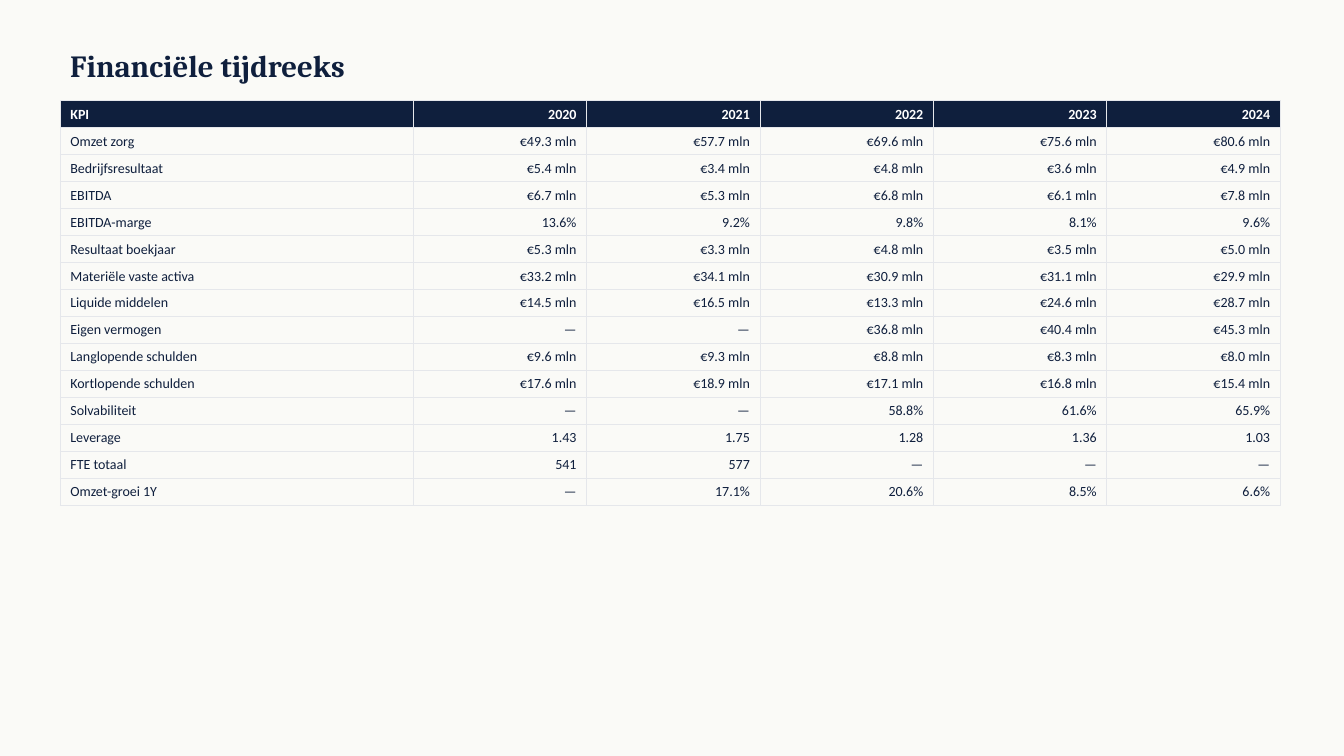
"""Build a slide with a table of financial figures for 2020 to 2024."""
import pptx
import pptx.dml.color
import pptx.enum.text
import pptx.oxml
import pptx.oxml.ns
import pptx.util
from pptx.util import Cm

COLORS = {"paper": "FAFAF7", "navy": "0F1F3D", "white": "FFFFFF", "grid": "E5E7EB"}
ROW_HEIGHT = Cm(0.68)
ROWS = [
    ("KPI", "2020", "2021", "2022", "2023", "2024"),
    ("Omzet zorg", "€49.3 mln", "€57.7 mln", "€69.6 mln", "€75.6 mln", "€80.6 mln"),
    ("Bedrijfsresultaat", "€5.4 mln", "€3.4 mln", "€4.8 mln", "€3.6 mln", "€4.9 mln"),
    ("EBITDA", "€6.7 mln", "€5.3 mln", "€6.8 mln", "€6.1 mln", "€7.8 mln"),
    ("EBITDA-marge", "13.6%", "9.2%", "9.8%", "8.1%", "9.6%"),
    ("Resultaat boekjaar", "€5.3 mln", "€3.3 mln", "€4.8 mln", "€3.5 mln", "€5.0 mln"),
    ("Materiële vaste activa", "€33.2 mln", "€34.1 mln", "€30.9 mln", "€31.1 mln", "€29.9 mln"),
    ("Liquide middelen", "€14.5 mln", "€16.5 mln", "€13.3 mln", "€24.6 mln", "€28.7 mln"),
    ("Eigen vermogen", "—", "—", "€36.8 mln", "€40.4 mln", "€45.3 mln"),
    ("Langlopende schulden", "€9.6 mln", "€9.3 mln", "€8.8 mln", "€8.3 mln", "€8.0 mln"),
    ("Kortlopende schulden", "€17.6 mln", "€18.9 mln", "€17.1 mln", "€16.8 mln", "€15.4 mln"),
    ("Solvabiliteit", "—", "—", "58.8%", "61.6%", "65.9%"),
    ("Leverage", "1.43", "1.75", "1.28", "1.36", "1.03"),
    ("FTE totaal", "541", "577", "—", "—", "—"),
    ("Omzet-groei 1Y", "—", "17.1%", "20.6%", "8.5%", "6.6%"),
]


def style_text(paragraph, font_name, size, color, bold):
    for span in paragraph.runs:
        span.font.name = font_name
        span.font.size = pptx.util.Pt(size)
        span.font.bold = bold
        span.font.color.rgb = pptx.dml.color.RGBColor.from_string(COLORS[color])


def add_borders(cell):
    properties = cell._tc.get_or_add_tcPr()
    for side in ("lnL", "lnR", "lnT", "lnB"):
        properties.append(pptx.oxml.parse_xml(
            f'<a:{side} {pptx.oxml.ns.nsdecls("a")} w="{pptx.util.Pt(0.5)}"><a:solidFill>'
            f'<a:srgbClr val="{COLORS["grid"]}"/></a:solidFill></a:{side}>'))


deck = pptx.Presentation()
deck.slide_width, deck.slide_height = Cm(33.87), Cm(19.05)
page = deck.slides.add_slide(deck.slide_layouts[6])
page.background.fill.solid()
page.background.fill.fore_color.rgb = pptx.dml.color.RGBColor.from_string(COLORS["paper"])

title_box = page.shapes.add_textbox(Cm(1.52), Cm(1.02), Cm(30.48), Cm(1.27))
title_box.text_frame.word_wrap = True
title_box.text_frame.vertical_anchor = pptx.enum.text.MSO_ANCHOR.MIDDLE
title_box.text_frame.text = "Financiële tijdreeks"
style_text(title_box.text_frame.paragraphs[0], "Cambria", 22, "navy", True)

table = page.shapes.add_table(
    len(ROWS), len(ROWS[0]), Cm(1.52), Cm(2.54), Cm(30.74), ROW_HEIGHT * len(ROWS)).table
table.horz_banding = False
for index, column in enumerate(table.columns):
    column.width = Cm(4.37) if index else Cm(8.89)

for row_index, values in enumerate(ROWS):
    table.rows[row_index].height = ROW_HEIGHT
    is_header = row_index == 0
    for column_index, value in enumerate(values):
        cell = table.cell(row_index, column_index)
        cell.text_frame.text = value
        paragraph = cell.text_frame.paragraphs[0]
        if column_index:
            paragraph.alignment = pptx.enum.text.PP_ALIGN.RIGHT
        style_text(paragraph, "Calibri", 10, "white" if is_header else "navy", is_header)
        add_borders(cell)
        if is_header:
            cell.fill.solid()
            cell.fill.fore_color.rgb = pptx.dml.color.RGBColor.from_string(COLORS["navy"])
        else:
            cell.fill.background()

deck.save("out.pptx")
